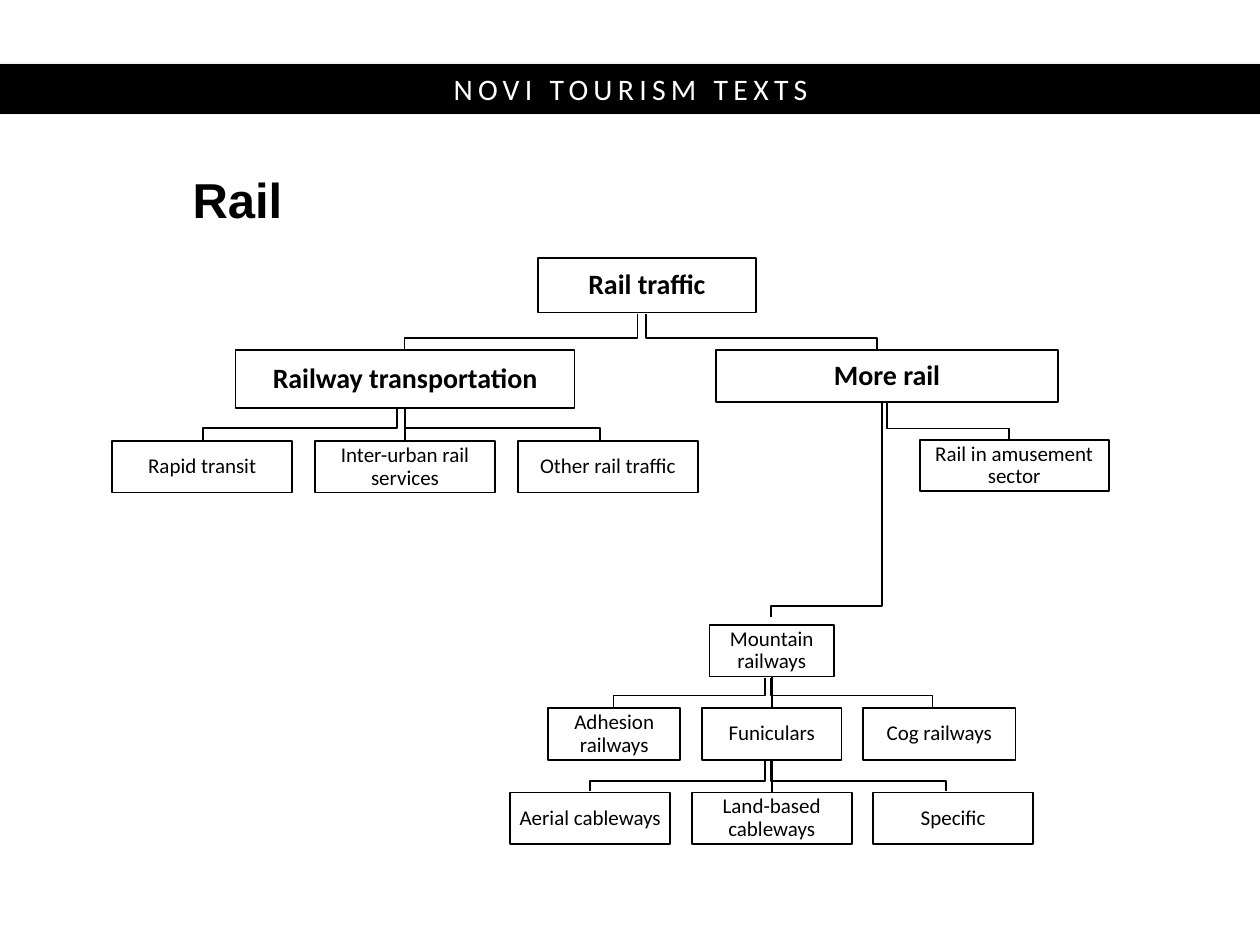
from pptx import Presentation
from pptx.dml.color import RGBColor
from pptx.enum.shapes import MSO_CONNECTOR as CONN, MSO_SHAPE as SHAPE
from pptx.enum.text import MSO_ANCHOR as ANCHOR, PP_ALIGN as ALIGN
from pptx.oxml.ns import qn
from pptx.util import Inches, Pt
from lxml import etree

COLORS = {"ink": "000000", "paper": "FFFFFF", "edge": "F2F2F2"}


class Chart:
    font = "Calibri"
    line_width = 1

    def __init__(self, slide):
        self.s = slide

    def color(self, name):
        return RGBColor.from_string(COLORS[name])

    def stroke(self, sp, color="ink", width=line_width):
        sp.line.color.rgb = self.color(color)
        sp.line.width = Pt(width)

    def label(self, sp, text, size, color="ink", bold=False, font=font,
              align=ALIGN.CENTER, spacing=0.9, margins=(0.01, 0.01)):
        tf = sp.text_frame
        tf.word_wrap = True
        tf.vertical_anchor = ANCHOR.MIDDLE
        tf.margin_left = tf.margin_right = Inches(margins[0])
        tf.margin_top = tf.margin_bottom = Inches(margins[1])
        p = tf.paragraphs[0]
        p.alignment = align
        p.line_spacing = spacing
        r = p.add_run()
        r.text = text
        r.font.name = font
        r.font.size = Pt(size)
        r.font.bold = bold
        r.font.color.rgb = self.color(color)
        return r

    def rect(self, x, y, w, h):
        sp = self.s.shapes.add_shape(SHAPE.RECTANGLE, *map(Inches, (x, y, w, h)))
        sp.shadow.inherit = False
        return sp

    def banner(self, text, x, y, w, h):
        sp = self.rect(x, y, w, h)
        sp.fill.solid()
        sp.fill.fore_color.rgb = self.color("ink")
        self.stroke(sp, "edge", 0.75)
        r = self.label(sp, text, 17, "paper", spacing=1.0, margins=(0.1, 0.05))
        r.font._element.set("spc", "300")

    def title(self, text, x, y, w, h):
        sp = self.s.shapes.add_textbox(*map(Inches, (x, y, w, h)))
        self.label(sp, text, 28, bold=True, font="Arial", align=ALIGN.LEFT,
                   spacing=Pt(32), margins=(0.1, 0.05))

    def box(self, text, x, y, w, h=0.41, heading=False):
        sp = self.rect(x, y, w, h)
        sp.fill.background()
        self.stroke(sp)
        self.label(sp, text, 16 if heading else 12, bold=heading)
        return sp

    def branch(self, x1, y1, bus, x2, y2):
        points = [(Inches(x), Inches(y))
                  for x, y in ((x1, y1), (x1, bus), (x2, bus), (x2, y2))]
        fb = self.s.shapes.build_freeform(*points[0])
        fb.add_line_segments(points[1:], close=False)
        sp = fb.convert_to_shape()
        sp.shadow.inherit = False
        sp.fill.background()
        self.stroke(sp)

    def link(self, parent, child):
        c = self.s.shapes.add_connector(CONN.STRAIGHT, 0, 0, 0, 0)
        c.begin_connect(parent, 2)
        c.end_connect(child, 0)
        self.stroke(c)
        etree.SubElement(c._element.spPr, qn("a:effectLst"))


def main():
    prs = Presentation()
    prs.slide_width, prs.slide_height = Inches(10), Inches(7.5)
    chart = Chart(prs.slides.add_slide(prs.slide_layouts[6]))

    chart.banner("NOVI TOURISM TEXTS", -0.08, 0.5, 10.17, 0.41)
    chart.title("Rail", 1.43, 1.35, 7.87, 0.48)

    for route in (
        (5.06, 2.49, 2.68, 3.21, 2.77),
        (5.13, 2.49, 2.68, 6.96, 2.77),
        (3.15, 3.23, 3.4, 1.61, 3.49),
        (3.21, 3.23, 3.4, 4.76, 3.49),
        (7, 3.19, 4.81, 6.12, 4.9),
        (7.04, 3.19, 3.4, 8.01, 3.48),
        (6.07, 5.38, 5.52, 4.87, 5.61),
        (6.12, 5.38, 5.52, 7.4, 5.61),
        (6.07, 6.03, 6.2, 4.68, 6.28),
        (6.12, 6.03, 6.2, 7.51, 6.28),
    ):
        chart.branch(*route)

    chart.box("Rail traffic", 4.27, 2.05, 1.73, 0.43, heading=True)
    transport = chart.box("Railway transportation", 1.87, 2.78, 2.69, 0.46, heading=True)
    chart.box("More rail", 5.68, 2.78, 2.72, heading=True)

    services = [chart.box(text, 0.89 + i * 1.61, 3.5, 1.43) for i, text in
                enumerate(("Rapid transit", "Inter-urban rail services", "Other rail traffic"))]
    chart.box("Rail in amusement sector", 7.3, 3.49, 1.5)

    mountain = chart.box("Mountain railways", 5.63, 4.96, 0.99)
    chart.box("Adhesion railways", 4.35, 5.62, 1.05)
    funiculars = chart.box("Funiculars", 5.57, 5.62, 1.11)
    chart.box("Cog railways", 6.85, 5.62, 1.21)

    cableways = [chart.box(text, 4.05 + i * 1.44, 6.29, 1.27) for i, text in
                 enumerate(("Aerial cableways", "Land-based cableways", "Specific"))]

    chart.link(transport, services[1])
    chart.link(mountain, funiculars)
    chart.link(funiculars, cableways[1])

    prs.save("out.pptx")


if __name__ == "__main__":
    main()
